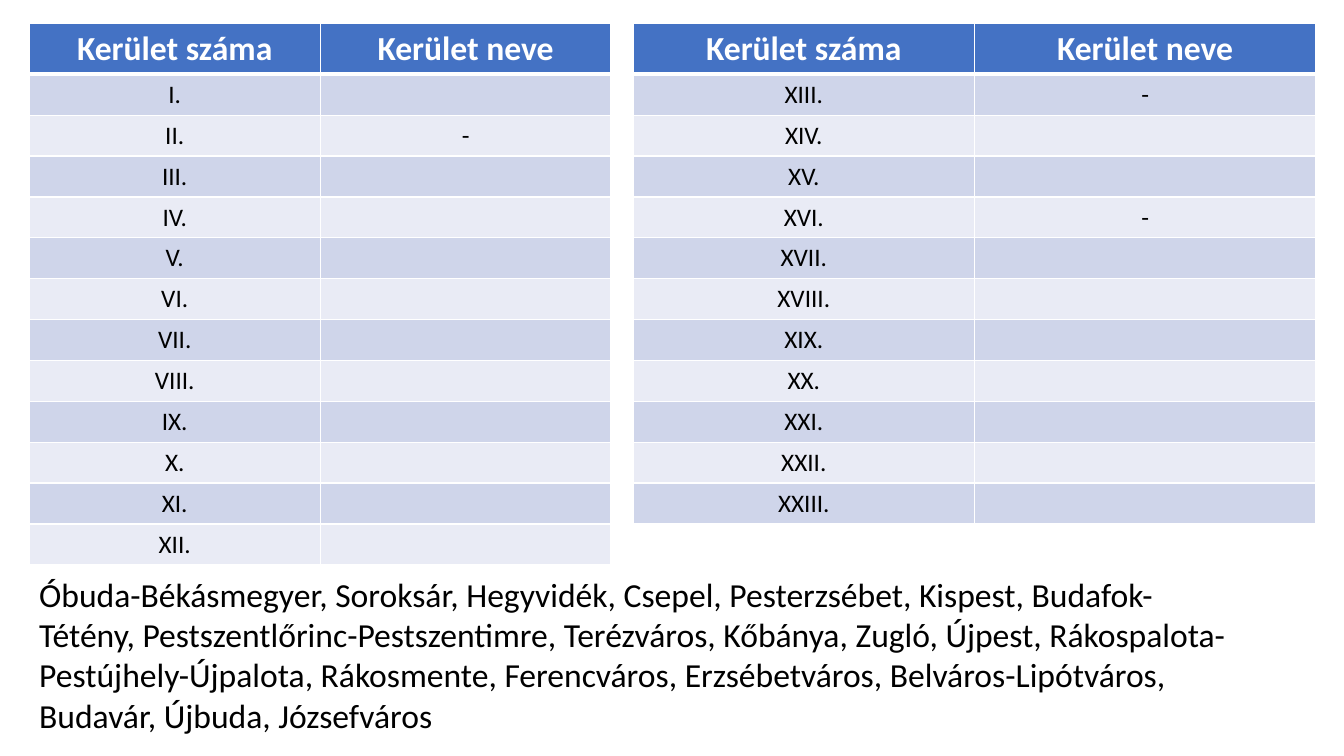
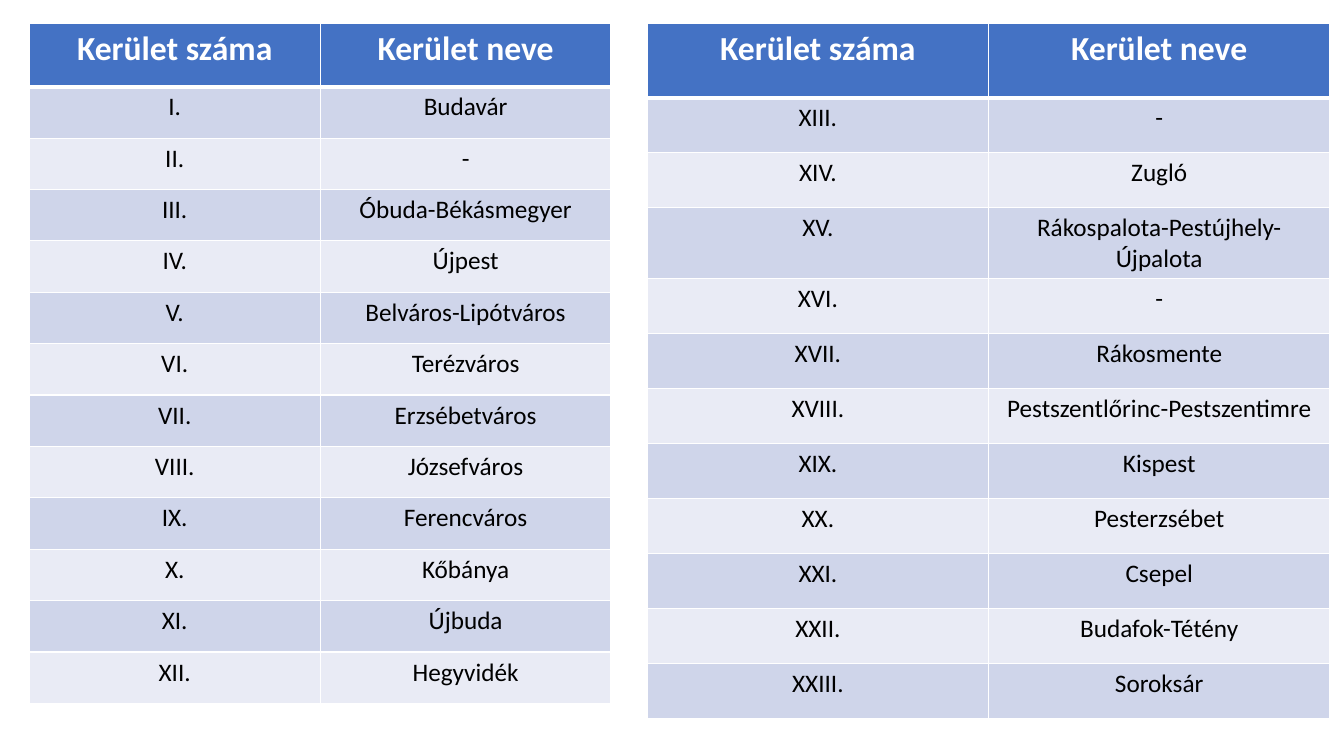
from dataclasses import dataclass

from lxml import etree
from pptx import Presentation, util as u
from pptx.dml import color
from pptx.enum import text as t
from pptx.oxml import ns


@dataclass(frozen=True)
class Theme:
    head: str = "4472C4"
    bands: tuple = ("CFD5EA", "E9EBF5")
    ink: str = "000000"
    paper: str = "FFFFFF"
    face: str = "Calibri"
    big: int = 24
    small: int = 18
    thin: int = 1
    thick: int = 3


THEME = Theme()
WIDE, HIGH = u.Inches(13.33), u.Inches(7.5)

# Content: the districts in order, "-" where there is no name
HEADS = ("Kerület száma", "Kerület neve")
ROMAN = ("I II III IV V VI VII VIII IX X XI XII XIII XIV XV XVI XVII "
         "XVIII XIX XX XXI XXII XXIII").split()
NAMES = [
    "Budavár", "-", "Óbuda-Békásmegyer", "Újpest", "Belváros-Lipótváros",
    "Terézváros", "Erzsébetváros", "Józsefváros", "Ferencváros", "Kőbánya",
    "Újbuda", "Hegyvidék", "-", "Zugló", "Rákospalota-Pestújhely-Újpalota",
    "-", "Rákosmente", "Pestszentlőrinc-Pestszentimre", "Kispest",
    "Pesterzsébet", "Csepel", "Budafok-Tétény", "Soroksár",
]
BANK = ("Óbuda-Békásmegyer, Soroksár, Hegyvidék, Csepel, Pesterzsébet, "
        "Kispest, Budafok-Tétény, Pestszentlőrinc-Pestszentimre, Terézváros, "
        "Kőbánya, Zugló, Újpest, Rákospalota-Pestújhely-Újpalota, "
        "Rákosmente, Ferencváros, Erzsébetváros, Belváros-Lipótváros, "
        "Budavár, Újbuda, Józsefváros")
SPLIT = 12

# Layout, in percent of the slide's width and height
LEFT, TOP = 2.18, 3.07
WIDTHS = (43.29, 50.79)
TASK = {"lefts": (LEFT, 47.11), "heads": (6.76, 6.76), "rows": (5.4, 5.4)}
KEY = {"lefts": (LEFT, 48.16), "heads": (8.4, 9.87), "rows": (6.8, 7.28)}
NOTE = (LEFT, 75.2, 91.5, 22.93)


def across(share):
    return round(WIDE * share / 100)


def down(share):
    return round(HIGH * share / 100)


def rgb(code):
    return color.RGBColor.from_string(code)


def write(para, words, size, ink, bold=False):
    run = para.add_run()
    run.text = words
    style = {"name": THEME.face, "size": u.Pt(size), "bold": bold}
    for key, value in style.items():
        setattr(run.font, key, value)
    run.font.color.rgb = rgb(ink)


def edge(cell, side, width):
    props = cell._tc.get_or_add_tcPr()
    line = etree.SubElement(props, ns.qn("a:ln" + side), w=str(u.Pt(width)))
    fill = etree.SubElement(line, ns.qn("a:solidFill"))
    etree.SubElement(fill, ns.qn("a:srgbClr"), val=THEME.paper)


def paint(cell, row, words):
    """Border, fill and text of one cell; row 0 is the header."""
    widths = {"L": THEME.thin, "R": THEME.thin,
              "T": THEME.thick if row == 1 else THEME.thin,
              "B": THEME.thick if row == 0 else THEME.thin}
    for side, width in widths.items():
        edge(cell, side, width)
    cell.fill.solid()
    back = THEME.bands[(row - 1) % 2] if row else THEME.head
    cell.fill.fore_color.rgb = rgb(back)
    para = cell.text_frame.paragraphs[0]
    para.alignment = t.PP_ALIGN.CENTER
    if words and row:
        write(para, words, THEME.small, THEME.ink)
    elif words:
        write(para, words, THEME.big, THEME.paper, bold=True)


def grid(slide, pairs, left, width, head, step):
    rows = [HEADS, *pairs]
    high = head + step * len(pairs)
    table = slide.shapes.add_table(
        len(rows), len(HEADS), across(left), down(TOP),
        across(width), down(high)).table
    table.horz_banding = False
    for r, words in enumerate(rows):
        table.rows[r].height = down(step if r else head)
        for c, word in enumerate(words):
            paint(table.cell(r, c), r, word)


def tables(slide, names, plan):
    pairs = [(num + ".", name) for num, name in zip(ROMAN, names)]
    parts = (pairs[:SPLIT], pairs[SPLIT:])
    for part, left, width, head, step in zip(
            parts, plan["lefts"], WIDTHS, plan["heads"], plan["rows"]):
        grid(slide, part, left, width, head, step)


def note(slide, words):
    left, top, width, high = NOTE
    box = slide.shapes.add_textbox(
        across(left), down(top), across(width), down(high))
    frame = box.text_frame
    frame.word_wrap = True
    frame.auto_size = t.MSO_AUTO_SIZE.SHAPE_TO_FIT_TEXT
    write(frame.paragraphs[0], words, THEME.big, THEME.ink)


def main():
    deck = Presentation()
    deck.slide_width, deck.slide_height = WIDE, HIGH
    blank = deck.slide_layouts[6]

    # Task: names to be filled in from the list below
    task = deck.slides.add_slide(blank)
    tables(task, [n if n == "-" else "" for n in NAMES], TASK)
    note(task, BANK)

    # Key: every name in its place
    tables(deck.slides.add_slide(blank), NAMES, KEY)

    deck.save("out.pptx")


if __name__ == "__main__":
    main()
